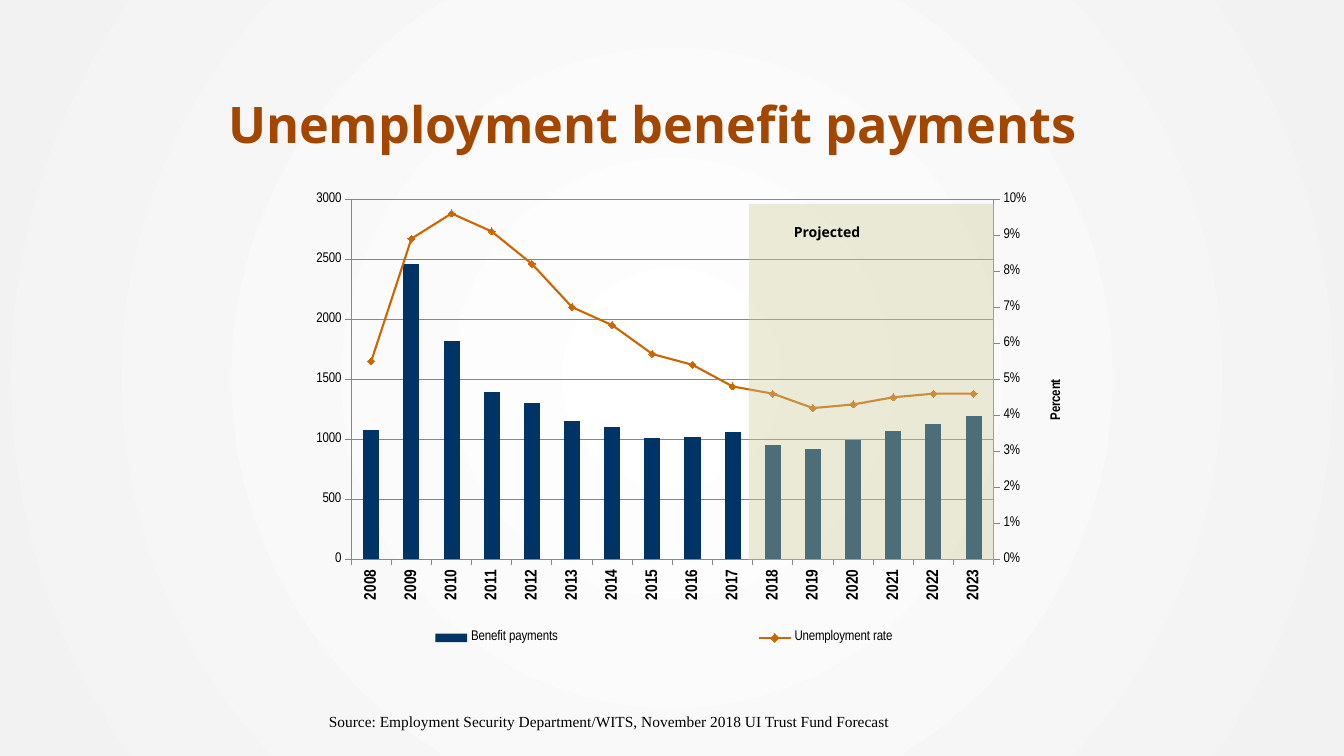
from dataclasses import dataclass

from lxml.etree import SubElement
from pptx import Presentation
from pptx.chart.axis import ValueAxis
from pptx.chart.data import CategoryChartData
from pptx.dml.color import RGBColor
from pptx.enum.chart import XL_CHART_TYPE, XL_LEGEND_POSITION, XL_MARKER_STYLE, XL_TICK_MARK
from pptx.enum.shapes import MSO_SHAPE
from pptx.enum.text import MSO_ANCHOR, PP_ALIGN
from pptx.oxml import parse_xml
from pptx.oxml.ns import nsdecls, qn
from pptx.util import Emu, Pt

TITLE = "Unemployment benefit payments"
SOURCE = "Source: Employment Security Department/WITS, November 2018 UI Trust Fund Forecast"
PROJECTED = "Projected"
YEARS = [str(year) for year in range(2008, 2024)]
PAYMENTS = ("Benefit payments", [1080, 2460, 1820, 1390, 1300, 1150, 1100, 1010,
                                 1020, 1060, 950, 920, 990, 1070, 1130, 1190])
RATE = ("Unemployment rate", [0.055, 0.089, 0.096, 0.091, 0.082, 0.07, 0.065, 0.057,
                              0.054, 0.048, 0.046, 0.042, 0.043, 0.045, 0.046, 0.046])

# Left, top, width, height in px
SLIDE_SIZE = (1344, 756)
TITLE_BOX = (218, 71, 887, 113)
SOURCE_BOX = (319, 707, 684, 29)
CHART_BOX = (239, 171, 850, 502)
PROJECTED_BAND = (749, 204, 245, 356)
PROJECTED_BOX = (784, 219, 94, 35)


@dataclass(frozen=True)
class Theme:
    heading: str = "Open Sans"
    chart: str = "Arial Narrow"
    footer: str = "Times New Roman"
    title: str = "A24600"
    text: str = "000000"
    bars: str = "003366"
    rate: str = "CC6600"
    band: str = "CCCC99"
    grid: str = "888888"
    center: str = "FFFFFF"
    edge: str = "F2F2F2"
    title_size: int = 36
    axis_size: int = 12
    source_size: int = 11
    small_size: int = 10


THEME = Theme()


def px(*lengths):
    return [Emu(round(length * 914400 / 100.8)) for length in lengths]


def rgb(color):
    return RGBColor.from_string(color)


def style(font, face, size, color=THEME.text, bold=False):
    font.name, font.size, font.bold = face, Pt(size), bold
    font.color.rgb = rgb(color)


def paint_background(slide):
    fill = slide.background.fill
    fill.gradient()
    for stop, color in zip(fill.gradient_stops, (THEME.center, THEME.edge)):
        stop.color.rgb = rgb(color)
    gradient = slide.element.find(".//" + qn("a:gradFill"))
    gradient.replace(gradient.find(qn("a:lin")), parse_xml(
        f'<a:path {nsdecls("a")} path="circle">'
        '<a:fillToRect l="50000" t="50000" r="50000" b="50000"/></a:path>'))


def add_label(slide, box, text, face, size, bold=False):
    frame = slide.shapes.add_textbox(*px(*box)).text_frame
    frame.word_wrap = True
    frame.text = text
    style(frame.paragraphs[0].font, face, size, bold=bold)


def remove_children(part, tag):
    for child in part.findall(qn(tag)):
        part.remove(child)


def place(part, index, inner=False, **fractions):
    """Give a chart part a manual layout, in fractions of the chart."""
    remove_children(part, "c:layout")
    modes = '<c:layoutTarget val="inner"/>' if inner else ""
    modes += '<c:xMode val="edge"/><c:yMode val="edge"/>'
    values = "".join(f'<c:{key} val="{value}"/>' for key, value in fractions.items())
    part.insert(index, parse_xml(
        f'<c:layout {nsdecls("c")}><c:manualLayout>{modes}{values}'
        '</c:manualLayout></c:layout>'))


def move_rate_to_right_axis(chart):
    """Turn the second series into a line on its own axes; return the value axis."""
    plot_area = chart.element.find(".//" + qn("c:plotArea"))
    bars = plot_area.find(qn("c:barChart"))
    rate = bars.findall(qn("c:ser"))[1]
    remove_children(rate, "c:invertIfNegative")
    line = parse_xml(
        f'<c:lineChart {nsdecls("c")}><c:grouping val="standard"/><c:varyColors val="0"/>'
        '<c:marker val="1"/><c:axId val="5001"/><c:axId val="5002"/></c:lineChart>')
    line.insert(2, rate)
    bars.addnext(line)

    def axis(tag, own, other, deleted, side, crosses):
        return parse_xml(
            f'<c:{tag} {nsdecls("c")}><c:axId val="{own}"/>'
            '<c:scaling><c:orientation val="minMax"/></c:scaling>'
            f'<c:delete val="{deleted}"/><c:axPos val="{side}"/>'
            '<c:majorTickMark val="out"/><c:minorTickMark val="none"/>'
            f'<c:tickLblPos val="nextTo"/><c:crossAx val="{other}"/>'
            f'<c:crosses val="{crosses}"/></c:{tag}>')

    right = axis("valAx", 5002, 5001, 0, "r", "max")
    left = plot_area.find(qn("c:valAx"))
    left.addnext(right)
    left.addnext(axis("catAx", 5001, 5002, 1, "b", "autoZero"))
    return ValueAxis(right)


def format_value_axis(axis, name, top, step, pattern, size, bold, x, y):
    axis.minimum_scale, axis.maximum_scale, axis.major_unit = 0, top, step
    axis.major_tick_mark = XL_TICK_MARK.OUTSIDE
    axis.tick_labels.number_format = pattern
    axis.tick_labels.number_format_is_linked = False
    style(axis.tick_labels.font, THEME.chart, size, bold=bold)
    axis.format.line.color.rgb = rgb(THEME.grid)
    frame = axis.axis_title.text_frame
    frame.text = name
    style(frame.paragraphs[0].font, THEME.chart, THEME.small_size, bold=True)
    title = axis._element.find(qn("c:title"))
    title.find(".//" + qn("a:bodyPr")).set("rot", "-5400000")
    place(title, 1, x=x, y=y)


def add_payments_chart(slide):
    data = CategoryChartData()
    data.categories = YEARS
    for name, values in (PAYMENTS, RATE):
        data.add_series(name, values)
    chart = slide.shapes.add_chart(
        XL_CHART_TYPE.COLUMN_CLUSTERED, *px(*CHART_BOX), data).chart
    chart.has_title = False
    style(chart.font, THEME.chart, THEME.small_size)
    right_axis = move_rate_to_right_axis(chart)
    place(chart.element.find(".//" + qn("c:plotArea")), 0, inner=True,
          x=0.132, y=0.056, w=0.756, h=0.718)

    bars, line = chart.plots
    bars.gap_width = 150
    bars.vary_by_categories = False
    payments, rate = bars.series[0], line.series[0]
    payments.format.fill.solid()
    payments.format.fill.fore_color.rgb = rgb(THEME.bars)
    rate.smooth = False
    rate.format.line.color.rgb = rgb(THEME.rate)
    rate.format.line.width = Pt(1.5)
    rate.marker.style, rate.marker.size = XL_MARKER_STYLE.DIAMOND, 5
    rate.marker.format.fill.solid()
    rate.marker.format.fill.fore_color.rgb = rgb(THEME.rate)
    rate.marker.format.line.color.rgb = rgb(THEME.rate)

    years = chart.category_axis
    years.major_tick_mark = XL_TICK_MARK.OUTSIDE
    style(years.tick_labels.font, THEME.chart, THEME.axis_size, bold=True)
    years.format.line.color.rgb = rgb(THEME.grid)
    years._element.find(qn("c:txPr")).find(qn("a:bodyPr")).set("rot", "-5400000")
    format_value_axis(chart.value_axis, "In millions", 3000, 500, '"$"#,##0',
                      THEME.axis_size, True, x=0.0, y=0.3)
    format_value_axis(right_axis, "Percent", 0.1, 0.01, "0%",
                      THEME.small_size, False, x=0.95, y=0.41)
    chart.value_axis.major_gridlines.format.line.color.rgb = rgb(THEME.grid)

    chart.has_legend = True
    chart.legend.position = XL_LEGEND_POSITION.BOTTOM
    chart.legend.include_in_layout = False
    style(chart.legend.font, THEME.chart, THEME.small_size)
    place(chart.element.find(".//" + qn("c:legend")), 1, x=0, y=0.9, w=1, h=0.06)


def add_projected_band(slide):
    band = slide.shapes.add_shape(MSO_SHAPE.RECTANGLE, *px(*PROJECTED_BAND))
    band.shadow.inherit = False
    band.line.fill.background()
    band.fill.solid()
    band.fill.fore_color.rgb = rgb(THEME.band)
    color = band.element.find(".//" + qn("a:srgbClr"))
    SubElement(color, qn("a:alpha")).set("val", "38000")


def main():
    deck = Presentation()
    deck.slide_width, deck.slide_height = px(*SLIDE_SIZE)
    slide = deck.slides.add_slide(deck.slide_layouts[5])
    paint_background(slide)
    title = slide.shapes.title
    title.left, title.top, title.width, title.height = px(*TITLE_BOX)
    title.text_frame.text = TITLE
    title.text_frame.vertical_anchor = MSO_ANCHOR.MIDDLE
    heading = title.text_frame.paragraphs[0]
    heading.alignment, heading.line_spacing = PP_ALIGN.LEFT, 0.9
    style(heading.font, THEME.heading, THEME.title_size, THEME.title, bold=True)
    add_label(slide, SOURCE_BOX, SOURCE, THEME.footer, THEME.source_size)
    add_payments_chart(slide)
    add_projected_band(slide)
    add_label(slide, PROJECTED_BOX, PROJECTED, THEME.heading, THEME.small_size, bold=True)
    deck.save("out.pptx")


if __name__ == "__main__":
    main()
